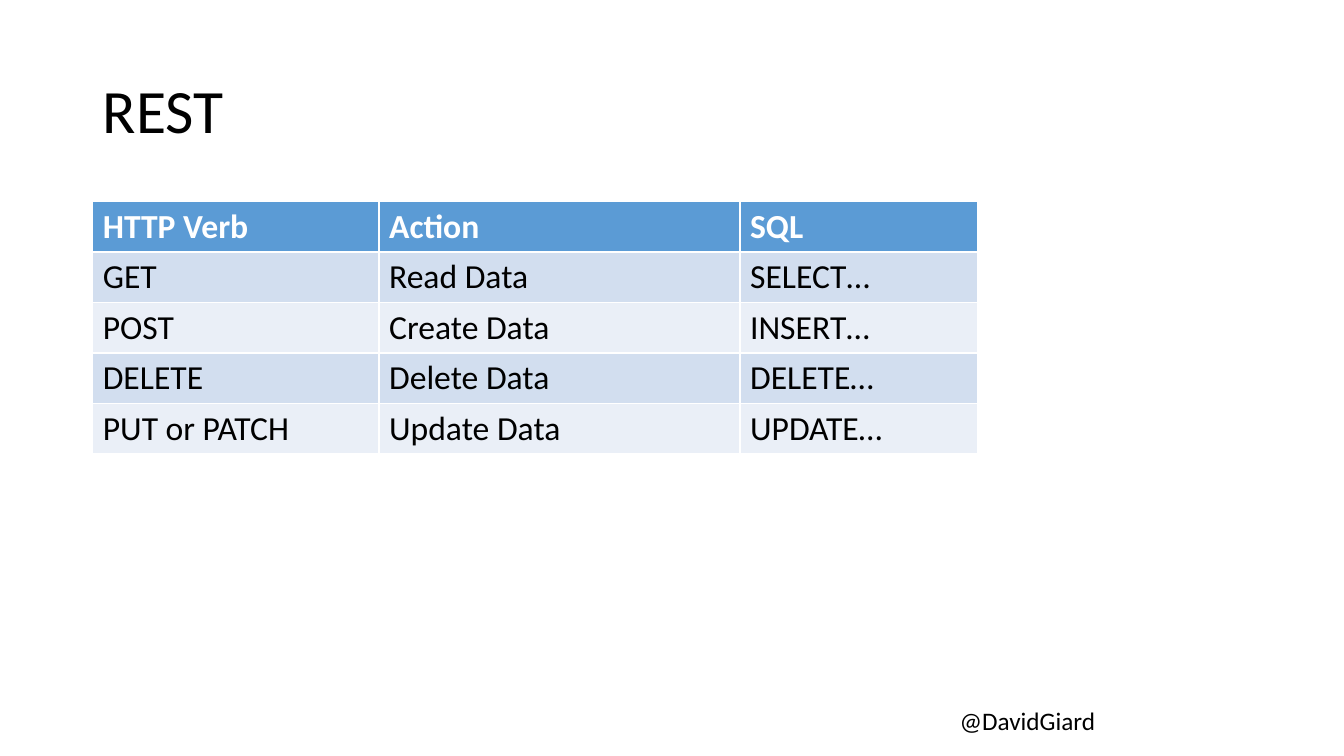
from dataclasses import dataclass

from pptx import Presentation
from pptx.dml.color import RGBColor
from pptx.enum.text import MSO_ANCHOR
from pptx.util import Inches, Pt


@dataclass(frozen=True)
class Theme:
    font: str = "Calibri"
    text: RGBColor = RGBColor.from_string("000000")
    header_text: RGBColor = RGBColor.from_string("FFFFFF")
    header_fill: RGBColor = RGBColor.from_string("5B9BD5")
    band_fills: tuple = (RGBColor.from_string("D2DEEF"), RGBColor.from_string("EAEFF7"))
    title_size: int = 44
    table_size: int = 24
    handle_size: int = 18


class SlideBuilder:
    def __init__(self, slide, theme):
        self.slide = slide
        self.theme = theme

    def style(self, paragraph, size, color, bold=False):
        font = paragraph.font
        font.name = self.theme.font
        font.size = Pt(size)
        font.color.rgb = color
        font.bold = bold

    def text(self, text, left, top, width, height, size, wrap=True):
        box = self.slide.shapes.add_textbox(
            Inches(left), Inches(top), Inches(width), Inches(height))
        frame = box.text_frame
        frame.word_wrap = wrap
        frame.vertical_anchor = MSO_ANCHOR.MIDDLE
        paragraph = frame.paragraphs[0]
        paragraph.text = text
        self.style(paragraph, size, self.theme.text)
        return paragraph

    def table(self, rows, left, top, column_widths, row_height):
        """Add a table with a bold header row and alternating body fills."""
        table = self.slide.shapes.add_table(
            len(rows), len(column_widths), Inches(left), Inches(top),
            Inches(sum(column_widths)), Inches(row_height * len(rows))).table
        for column, width in zip(table.columns, column_widths):
            column.width = Inches(width)
        theme = self.theme
        for row_index, values in enumerate(rows):
            is_header = row_index == 0
            fill = theme.header_fill if is_header else theme.band_fills[(row_index - 1) % 2]
            color = theme.header_text if is_header else theme.text
            for column_index, value in enumerate(values):
                cell = table.cell(row_index, column_index)
                cell.text = value
                cell.fill.solid()
                cell.fill.fore_color.rgb = fill
                self.style(cell.text_frame.paragraphs[0], theme.table_size, color, is_header)


VERB_ROWS = [
    ("HTTP Verb", "Action", "SQL"),
    ("GET", "Read Data", "SELECT…"),
    ("POST", "Create Data", "INSERT…"),
    ("DELETE", "Delete Data", "DELETE…"),
    ("PUT or PATCH", "Update Data", "UPDATE…"),
]


def main():
    presentation = Presentation()
    presentation.slide_width = Inches(13.33)
    presentation.slide_height = Inches(7.5)
    slide = presentation.slides.add_slide(presentation.slide_layouts[6])
    theme = Theme()
    builder = SlideBuilder(slide, theme)

    builder.text("@DavidGiard", 9.42, 6.95, 1.56, 0.4, theme.handle_size, wrap=False)
    title = builder.text("REST", 0.92, 0.4, 11.5, 1.45, theme.title_size)
    title.line_spacing = 0.9
    builder.table(VERB_ROWS, 0.92, 2, (2.84, 3.58, 2.36), 0.5)

    presentation.save("out.pptx")


if __name__ == "__main__":
    main()
